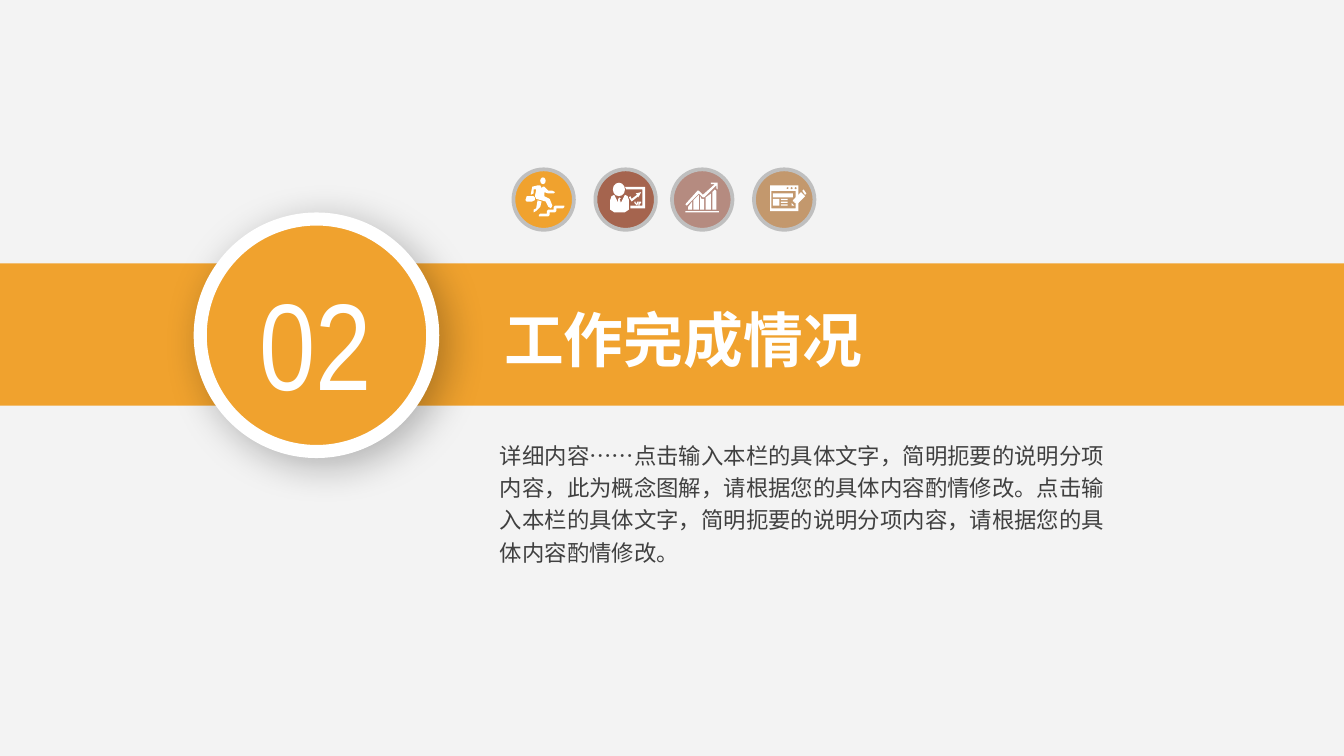
"""Build a section divider slide with a numbered badge, a title and four icons."""
from dataclasses import dataclass

from lxml import etree
from pptx import Presentation
from pptx.dml.color import RGBColor
from pptx.enum import shapes, text
from pptx.oxml import ns
from pptx.util import Inches, Pt

ORANGE, WHITE, GREY, DARK = "F0A22E", "FFFFFF", "BFBFBF", "404040"
CJK = "Noto Sans CJK SC"
OVAL, RECT = shapes.MSO_SHAPE.OVAL, shapes.MSO_SHAPE.RECTANGLE
ICON_TOP, ICON_SIZE = 1.26, 0.45
BODY = (
    "详细内容……点击输入本栏的具体文字，简明扼要的说明分项内容，此为概念图解，"
    "请根据您的具体内容酌情修改。点击输入本栏的具体文字，简明扼要的说明分项内容，"
    "请根据您的具体内容酌情修改。"
)

Outline = list[tuple[int, int]]
Box = tuple[int, int, int, int]


@dataclass
class Icon:
    """A round icon whose glyph is measured in hundredths of an inch from its corner."""
    left: float
    color: str
    outlines: list[list[Outline]]
    ovals: tuple[Box, ...] = ()
    rects: tuple[Box, ...] = ()


def diamond(x: int, y: int) -> Outline:
    """Return a small diamond around a centre."""
    return [(x - 1, y), (x, y - 1), (x + 1, y), (x, y + 1)]


RUNNER = Icon(3.82, ORANGE, [
    [[(20, 33), (25, 33), (25, 31), (26, 30), (30, 30), (30, 28), (31, 27), (38, 27), (38, 28),
      (37, 29), (32, 29), (32, 31), (31, 32), (27, 32), (27, 34), (26, 35), (19, 35), (19, 34)]],
    [[(10, 24), (14, 24), (16, 23), (16, 21), (15, 20), (10, 20), (9, 23)]],
    [[(15, 30), (17, 29), (18, 23), (21, 24), (20, 28), (17, 31), (15, 32)]],
    [[(22, 13), (23, 13), (26, 16), (29, 16), (31, 17), (30, 18), (26, 18), (23, 17), (23, 20),
      (27, 22), (29, 27), (28, 29), (26, 28), (24, 24), (17, 22), (16, 20), (17, 15), (15, 15),
      (15, 18), (13, 19), (13, 18), (14, 13), (18, 12), (20, 12), (21, 14)]],
], ovals=((20, 6, 4, 5),))

PRESENTER = Icon(4.43, "A5644E", [
    [[(22, 13), (23, 15), (35, 15), (35, 27), (26, 27), (26, 29), (37, 29), (37, 13)]],
    [[(26, 20), (25, 21), (27, 24), (32, 20), (32, 21), (34, 17), (30, 18), (31, 19), (27, 22)]],
    [[(22, 19), (19, 25), (18, 22), (19, 22), (18, 21), (17, 22), (17, 25), (14, 19), (12, 20),
      (11, 23), (11, 30), (14, 32), (22, 32), (25, 30), (25, 23), (24, 20)]],
    [[(29, 24), (29, 25), (31, 27), (32, 25), (32, 24), (31, 24), (31, 26), (30, 25), (30, 24)]],
    [[(32, 24), (32, 27), (33, 27), (33, 26), (34, 25), (34, 24)]],
], ovals=((13, 10, 9, 10),))

GROWTH = Icon(5, "B58B80", [
    [[(12, 30), (15, 30), (15, 24), (12, 28)]],
    [[(16, 30), (20, 30), (20, 19), (16, 23)]],
    [[(21, 30), (24, 30), (24, 22), (22, 22), (21, 20)]],
    [[(25, 30), (29, 30), (29, 18), (25, 21)]],
    [[(30, 30), (33, 30), (33, 16), (32, 15), (30, 17)]],
    [[(11, 27), (20, 18), (23, 21), (24, 21), (33, 12), (33, 14), (34, 15), (34, 10), (29, 10),
      (29, 11), (32, 11), (23, 19), (20, 16), (19, 16), (10, 26)]],
], rects=((10, 31, 25, 1),))

FORM = Icon(5.61, "C3986D", [
    [[(12, 12), (33, 12), (33, 31), (12, 31)], [(13, 16), (31, 16), (31, 29), (13, 29)],
     *[diamond(x, 14) for x in (25, 28, 31)]],
    [[(28, 25), (28, 27), (30, 27)]],
    [[(38, 19), (39, 18), (37, 15), (36, 16)]],
    [[(35, 17), (29, 23), (29, 24), (30, 24), (30, 25), (31, 25), (32, 26), (38, 20)]],
], rects=((14, 18, 15, 3), (14, 22, 5, 5), *[(20, y, 5, 1) for y in (22, 24, 26)]))


def rgb(color: str) -> RGBColor:
    """Turn a hex string into a colour."""
    return RGBColor.from_string(color)


def paint(sp, fill: str, line: str | None = None, width: float = 0) -> None:
    """Set fill and line and drop the theme shadow."""
    sp.shadow.inherit = False
    sp.fill.solid()
    sp.fill.fore_color.rgb = rgb(fill)
    if line:
        sp.line.color.rgb = rgb(line)
        sp.line.width = Pt(width)
    else:
        sp.line.fill.background()


def add_shape(parent, kind, box, fill: str, line: str | None = None, width: float = 0):
    """Add a painted preset shape at a box given in inches."""
    sp = parent.add_shape(kind, *map(Inches, box))
    paint(sp, fill, line, width)
    return sp


def add_outline(parent, left: float, top: float, contours: list[Outline]) -> None:
    """Add a white freeform made of closed contours."""
    first, *others = contours
    builder = parent.build_freeform(*first[0], scale=Inches(0.01))
    builder.add_line_segments(first[1:])
    for contour in others:
        builder.move_to(*contour[0])
        builder.add_line_segments(contour[1:])
    paint(builder.convert_to_shape(Inches(left), Inches(top)), WHITE)


def add_icon(s, icon: Icon) -> None:
    """Draw a ringed disc and its glyph as one group."""
    parent = s.shapes.add_group_shape().shapes
    add_shape(parent, OVAL, (icon.left, ICON_TOP, ICON_SIZE, ICON_SIZE), icon.color, GREY, 2)
    for contours in icon.outlines:
        add_outline(parent, icon.left, ICON_TOP, contours)
    for kind, boxes in ((OVAL, icon.ovals), (RECT, icon.rects)):
        for x, y, w, h in boxes:
            box = (icon.left + x / 100, ICON_TOP + y / 100, w / 100, h / 100)
            add_shape(parent, kind, box, WHITE)


def write(sp, words: str, size: float, color: str, font: str = CJK, bold: bool = False,
          align=text.PP_ALIGN.LEFT, anchor=text.MSO_ANCHOR.TOP, inset=(0.07, 0.04),
          spacing: float = 1.0) -> None:
    """Fill a text shape with one formatted paragraph."""
    tf = sp.text_frame
    tf.word_wrap = True
    tf.vertical_anchor = anchor
    tf.margin_left = tf.margin_right = Inches(inset[0])
    tf.margin_top = tf.margin_bottom = Inches(inset[1])
    p = tf.paragraphs[0]
    p.text = words
    p.alignment = align
    p.line_spacing = spacing
    p.font.name, p.font.size, p.font.bold = font, Pt(size), bold
    p.font.color.rgb = rgb(color)
    props = p._p.pPr.find(ns.qn("a:defRPr"))
    etree.SubElement(props, ns.qn("a:ea"), typeface=font)


def add_shadow(sp, blur: float, distance: float, angle: int, alpha: int) -> None:
    """Give a shape a soft black outer shadow."""
    effects = sp._element.spPr.find(ns.qn("a:effectLst"))
    shadow = etree.SubElement(
        effects, ns.qn("a:outerShdw"), blurRad=str(Pt(blur)), dist=str(Pt(distance)),
        dir=str(angle * 60000), algn="tl", rotWithShape="0")
    color = etree.SubElement(shadow, ns.qn("a:srgbClr"), val="000000")
    etree.SubElement(color, ns.qn("a:alpha"), val=str(alpha * 1000))


def add_badge(s) -> None:
    """Draw the shadowed section number."""
    parent = s.shapes.add_group_shape().shapes
    disc = add_shape(parent, OVAL, (1.49, 1.63, 1.73, 1.73), ORANGE, WHITE, 7)
    add_shadow(disc, blur=22, distance=6, angle=45, alpha=28)
    number = parent.add_textbox(*map(Inches, (1.69, 1.95, 1.31, 1.19)))
    write(number, "02", 66, WHITE, "Arial Narrow", align=text.PP_ALIGN.CENTER)


def main() -> None:
    """Assemble and save the slide."""
    prs = Presentation()
    prs.slide_width = Inches(10)
    prs.slide_height = prs.slide_width * 9 // 16
    s = prs.slides.add_slide(prs.slide_layouts[5])
    s.background.fill.solid()
    s.background.fill.fore_color.rgb = rgb("F3F3F3")

    band = add_shape(s.shapes, RECT, (0, 1.96, 10, 1.06), ORANGE)
    title = s.shapes.title
    band._element.addnext(title._element)
    title.left, title.top, title.width, title.height = map(Inches, (3.65, 2.2, 3.54, 0.64))
    write(title, "工作完成情况", 32, WHITE, bold=True,
          anchor=text.MSO_ANCHOR.MIDDLE, inset=(0.1, 0.05))
    body = s.shapes.add_textbox(*map(Inches, (3.65, 3.21, 4.66, 1.05)))
    write(body, BODY, 12, DARK, spacing=1.2)

    for icon in (RUNNER, PRESENTER, FORM, GROWTH):
        add_icon(s, icon)
    add_badge(s)
    prs.save("out.pptx")


if __name__ == "__main__":
    main()
